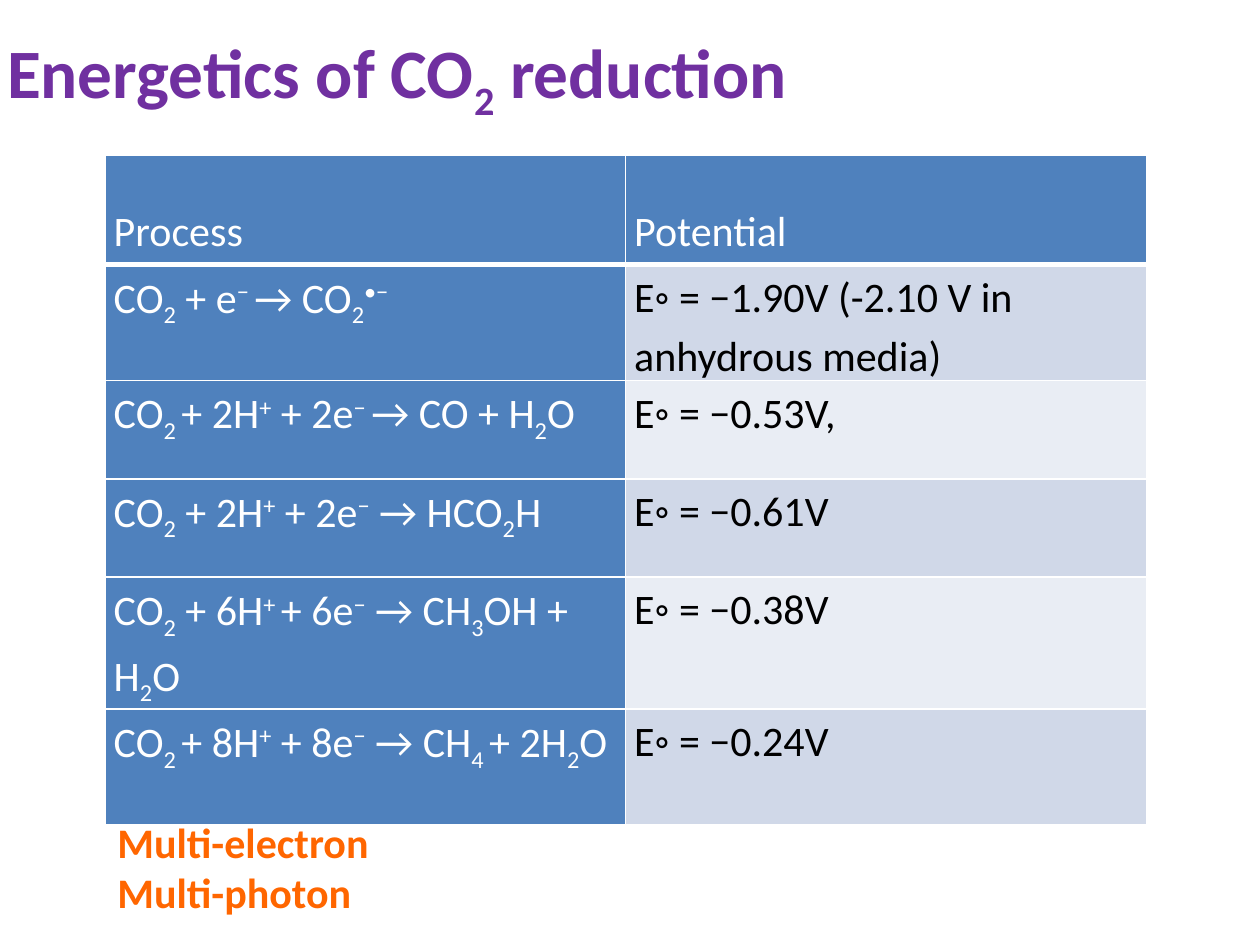
from lxml.etree import SubElement
from pptx import Presentation
from pptx.dml.color import RGBColor
from pptx.enum.text import MSO_ANCHOR
from pptx.oxml.ns import qn
from pptx.util import Pt

COLORS = {
    "title": "7030A0", "note": "FF6600", "white": "FFFFFF", "black": "000000",
    "blue": "4F81BD", "band_dark": "D0D8E8", "band_light": "E9EDF4",
}
BASELINES = {"_": "-25000", "^": "30000"}


def write(paragraph, marked_text, size, color, bold=False):
    """Pieces are split by |; a leading _ is subscript, ^ is superscript."""
    paragraph.font.name = "Calibri"
    paragraph.font.size = Pt(size)
    paragraph.font.bold = bold
    paragraph.font.color.rgb = RGBColor.from_string(COLORS[color])
    for piece in marked_text.split("|"):
        run = paragraph.add_run()
        if piece[0] in BASELINES:
            run.font._element.set("baseline", BASELINES[piece[0]])
            piece = piece[1:]
        run.text = piece


def add_borders(cell, bottom_width):
    properties = cell._tc.get_or_add_tcPr()
    for side, width in (("L", 1), ("R", 1), ("T", 1), ("B", bottom_width)):
        line = SubElement(properties, qn(f"a:ln{side}"), w=str(Pt(width)))
        fill = SubElement(line, qn("a:solidFill"))
        SubElement(fill, qn("a:srgbClr"), val=COLORS["white"])


presentation = Presentation()
presentation.slide_width, presentation.slide_height = Pt(720), Pt(540)
slide = presentation.slides.add_slide(presentation.slide_layouts[6])

# Title
title = slide.shapes.add_textbox(Pt(-3), Pt(21.6), Pt(648), Pt(44)).text_frame
title.word_wrap = True
title.vertical_anchor = MSO_ANCHOR.MIDDLE
write(title.paragraphs[0], "Energetics of CO|_2| reduction", 39.6, "title", bold=True)

# Table of reduction potentials
rows = [
    ("Process", "Potential"),
    ("CO|_2| + e|^− |→ CO|_2|^•−", "E◦ = −1.90V (-2.10 V in anhydrous media)"),
    ("CO|_2 |+ 2H|^+| + 2e|^− |→ CO + H|_2|O", "E◦ = −0.53V,"),
    ("CO|_2| + 2H|^+| + 2e|^−| → HCO|_2|H", "E◦ = −0.61V"),
    ("CO|_2| + 6H|^+ |+ 6e|^−| → CH|_3|OH + H|_2|O", "E◦ = −0.38V"),
    ("CO|_2 |+ 8H|^+| + 8e|^−| → CH|_4 |+ 2H|_2|O", "E◦ = −0.24V"),
]
row_heights = [62.4, 66.3, 56.2, 56.2, 66.3, 66.3]
table = slide.shapes.add_table(
    len(rows), 2, Pt(60), Pt(88.8), Pt(595.4), Pt(sum(row_heights))).table
table.columns[0].width, table.columns[1].width = Pt(297.4), Pt(298)
for row_index, (row, height) in enumerate(zip(rows, row_heights)):
    table.rows[row_index].height = Pt(height)
    header = row_index == 0
    band = "band_dark" if row_index % 2 else "band_light"
    for column_index, text in enumerate(row):
        cell = table.cell(row_index, column_index)
        cell.margin_left = cell.margin_right = Pt(5)
        cell.margin_top = cell.margin_bottom = 0
        add_borders(cell, 3 if header else 1)
        on_blue = header or column_index == 0
        cell.fill.solid()
        cell.fill.fore_color.rgb = RGBColor.from_string(COLORS["blue" if on_blue else band])
        paragraph = cell.text_frame.paragraphs[0]
        paragraph.line_spacing = 2.0 if header else 1.15
        write(paragraph, text, 24, "white" if on_blue else "black")

# Notes below the table
notes = slide.shapes.add_textbox(Pt(60), Pt(463), Pt(160), Pt(65.4)).text_frame
notes.word_wrap = False
write(notes.paragraphs[0], "Multi-electron", 24, "note", bold=True)
write(notes.add_paragraph(), "Multi-photon", 24, "note", bold=True)

presentation.save("out.pptx")
